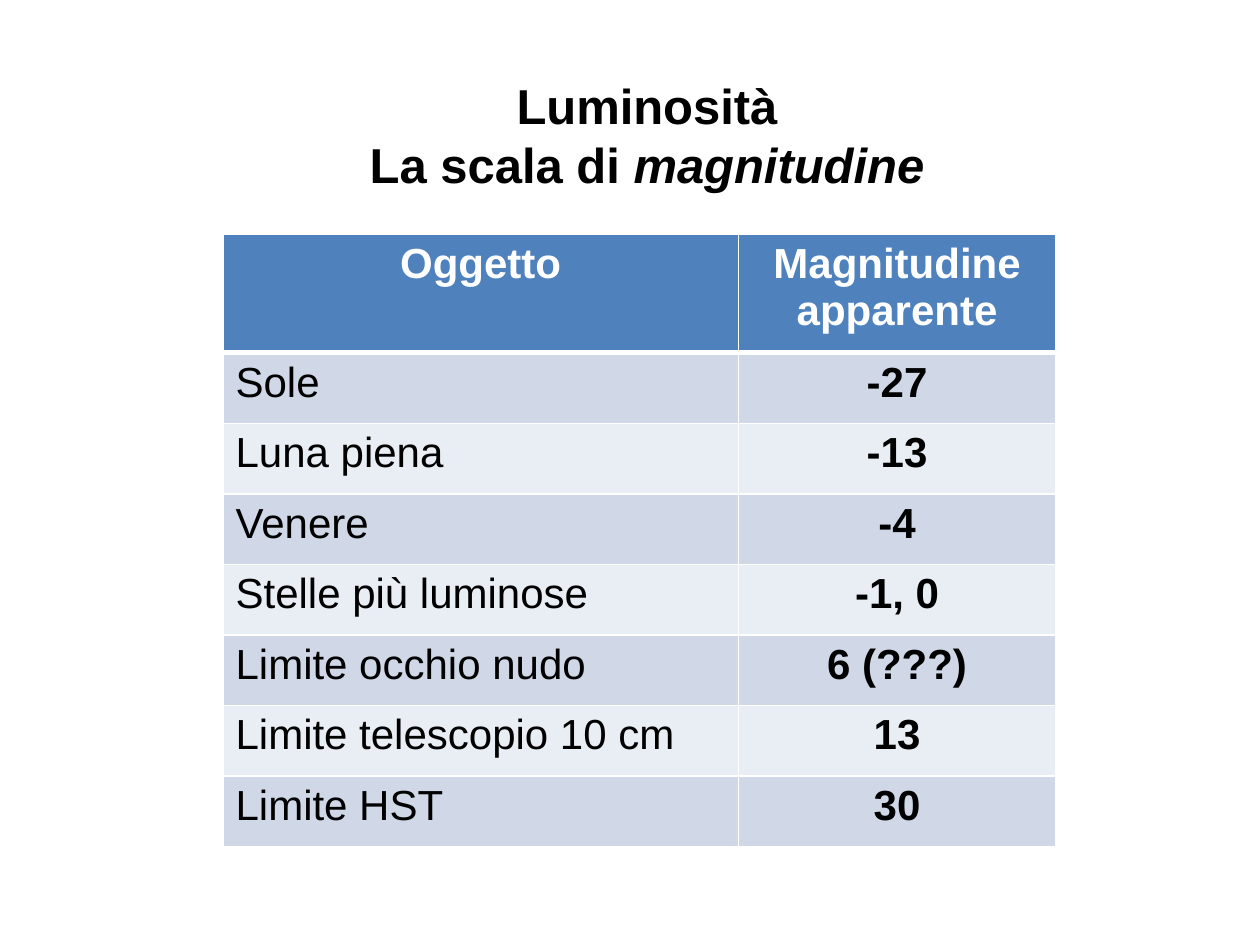
from lxml.etree import SubElement
from pptx import Presentation
from pptx.dml.color import RGBColor
from pptx.enum.text import MSO_ANCHOR, MSO_AUTO_SIZE, PP_ALIGN
from pptx.oxml.ns import qn
from pptx.util import Inches, Pt

# Content
TITLE = [[("Luminosità", False)],
         [("La scala di ", False), ("magnitudine", True)]]
ROWS = [
    ("Oggetto", "Magnitudine apparente"),
    ("Sole", "-27"),
    ("Luna piena", "-13"),
    ("Venere", "-4"),
    ("Stelle più luminose", "-1, 0"),
    ("Limite occhio nudo", "6 (???)"),
    ("Limite telescopio 10 cm", "13"),
    ("Limite HST", "30"),
]

# Look
FONT = "Arial"
COLORS = {"text": "000000", "white": "FFFFFF", "header": "4F81BD",
          "odd": "D0D8E8", "even": "E9EDF4"}
COL_WIDTHS = (4.09, 2.52)
HEADER_HEIGHT, ROW_HEIGHT = 0.94, 0.56


def add_run(p, text, size, color, bold=False, italic=False):
    r = p.add_run()
    r.text = text
    r.font.name, r.font.size = FONT, Pt(size)
    r.font.bold, r.font.italic = bold, italic
    r.font.color.rgb = RGBColor.from_string(COLORS[color])


def add_borders(cell, widths):
    """Draw white lines; call before the fill, which must follow them."""
    tcPr = cell._tc.get_or_add_tcPr()
    for side, width in widths.items():
        ln = SubElement(tcPr, qn(f"a:ln{side}"), w=str(Pt(width)))
        fill = SubElement(ln, qn("a:solidFill"))
        SubElement(fill, qn("a:srgbClr"), val=COLORS["white"])


prs = Presentation()
prs.slide_width, prs.slide_height = Inches(10), Inches(7.5)
s = prs.slides.add_slide(prs.slide_layouts[5])

# Title
title = s.shapes.title
title.left, title.top = Inches(2.74), Inches(0.55)
title.width, title.height = Inches(4.79), Inches(1.04)
tf = title.text_frame
tf.auto_size, tf.word_wrap = MSO_AUTO_SIZE.NONE, False
tf.vertical_anchor = MSO_ANCHOR.TOP
for i, line in enumerate(TITLE):
    p = tf.paragraphs[0] if i == 0 else tf.add_paragraph()
    p.alignment = PP_ALIGN.CENTER
    for text, italic in line:
        add_run(p, text, 28, "text", bold=True, italic=italic)

# Magnitude table
heights = [HEADER_HEIGHT] + [ROW_HEIGHT] * (len(ROWS) - 1)
table = s.shapes.add_table(len(ROWS), len(COL_WIDTHS), Inches(1.77), Inches(1.86),
                           Inches(sum(COL_WIDTHS)), Inches(sum(heights))).table
for column, width in zip(table.columns, COL_WIDTHS):
    column.width = Inches(width)
for i, (values, height) in enumerate(zip(ROWS, heights)):
    table.rows[i].height = Inches(height)
    header = i == 0
    band = "header" if header else "odd" if i % 2 else "even"
    for j, value in enumerate(values):
        cell = table.cell(i, j)
        add_borders(cell, {"L": 1, "R": 1, "T": 3 if i == 1 else 1,
                           "B": 3 if header else 1})
        cell.fill.solid()
        cell.fill.fore_color.rgb = RGBColor.from_string(COLORS[band])
        p = cell.text_frame.paragraphs[0]
        centred = header or j == 1
        p.alignment = PP_ALIGN.CENTER if centred else PP_ALIGN.LEFT
        add_run(p, value, 24, "white" if header else "text", bold=centred)

prs.save("out.pptx")
